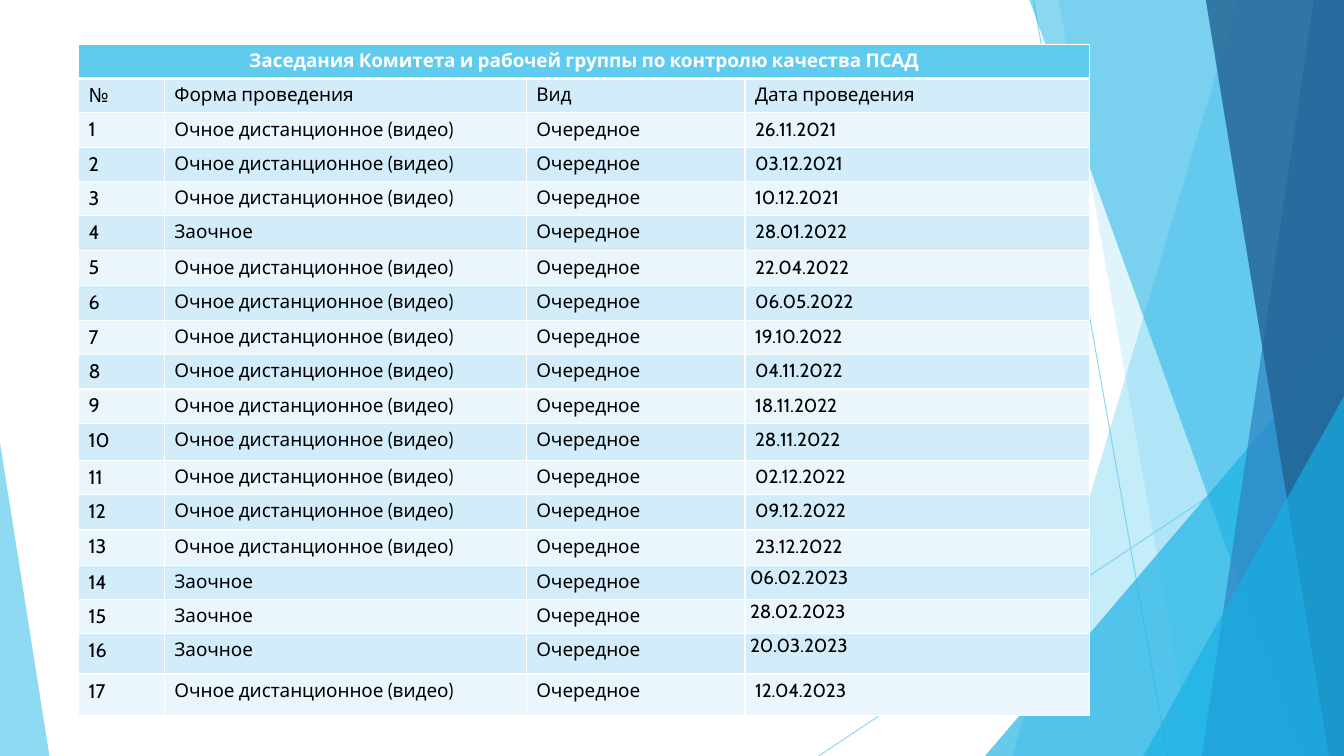
from lxml import etree
from pptx import Presentation
from pptx.dml.color import RGBColor
from pptx.enum.shapes import MSO_CONNECTOR, MSO_SHAPE
from pptx.enum.text import PP_ALIGN
from pptx.oxml.ns import qn
from pptx.util import Inches, Pt

TRIANGLE = MSO_SHAPE.ISOSCELES_TRIANGLE
STRAIGHT = MSO_CONNECTOR.STRAIGHT
CENTER = PP_ALIGN.CENTER
LEFT = PP_ALIGN.LEFT

SKY = RGBColor(0x5F, 0xCB, 0xEF)
AZURE = RGBColor(0x17, 0xB0, 0xE4)
BLUE = RGBColor(0x2E, 0x83, 0xC3)
NAVY = RGBColor(0x22, 0x62, 0x92)
DARK_BAND = RGBColor(0xD2, 0xEC, 0xF9)
LIGHT_BAND = RGBColor(0xEA, 0xF6, 0xFC)
WHITE = RGBColor(0xFF, 0xFF, 0xFF)
BLACK = RGBColor(0, 0, 0)

# The grid has square cells, a hundred to the inch.
GRID_COLUMNS, GRID_ROWS = 1333, 750
CELL = Inches(0.01)

TITLE = "Заседания Комитета и рабочей группы по контролю качества ПСАД"
HEADINGS = ["№", "Форма проведения", "Вид", "Дата проведения"]
DATES = [
    "26.11.2021", "03.12.2021", "10.12.2021", "28.01.2022", "22.04.2022", "06.05.2022",
    "19.10.2022", "04.11.2022", "18.11.2022", "28.11.2022", "02.12.2022", "09.12.2022",
    "23.12.2022", "06.02.2023", "28.02.2023", "20.03.2023", "12.04.2023",
]
ABSENTEE_MEETINGS = {4, 14, 15, 16}
TIGHT_DATES = {14, 15, 16}
COLUMN_WIDTHS = [85, 359, 217, 342]
ROW_HEIGHTS = [34, 34, 34, 34, 34, 35, 34, 35, 34, 34,
               34, 37, 34, 35, 35, 34, 34, 40, 41]


class SlideBuilder:
    font_name = "Cabin"
    text_size = Pt(13.5)
    number_size = Pt(14)

    def __init__(self, presentation):
        self.slide = presentation.slides.add_slide(presentation.slide_layouts[6])
        self.shapes = self.slide.shapes

    def set_opacity(self, color_format, percent):
        color = color_format._xFill.find(qn("a:srgbClr"))
        etree.SubElement(color, qn("a:alpha"), val=str(percent * 1000))

    def paint(self, shape, color, opacity):
        shape.shadow.inherit = False
        shape.line.fill.background()
        shape.fill.solid()
        shape.fill.fore_color.rgb = color
        self.set_opacity(shape.fill.fore_color, opacity)

    def thin_line(self, start, end):
        points = [value * CELL for value in (*start, *end)]
        connector = self.shapes.add_connector(STRAIGHT, *points)
        connector.line.width = Pt(0.75)
        connector.line.color.rgb = SKY
        self.set_opacity(connector.line.fill.fore_color, 70)
        etree.SubElement(connector._element.spPr, qn("a:effectLst"))

    def panel(self, top_left, bottom_left, color, opacity):
        """Fill from a slanted left edge to the right edge of the slide."""
        builder = self.shapes.build_freeform(top_left, 0, scale=CELL)
        builder.add_line_segments([(GRID_COLUMNS, 0), (GRID_COLUMNS, GRID_ROWS),
                                   (bottom_left, GRID_ROWS)])
        self.paint(builder.convert_to_shape(), color, opacity)

    def corner(self, left, top, width, apex, color, opacity):
        """Stand a right triangle on the bottom edge of the slide."""
        box = [value * CELL for value in (left, top, width, GRID_ROWS - top)]
        shape = self.shapes.add_shape(TRIANGLE, *box)
        shape.adjustments[0] = apex
        self.paint(shape, color, opacity)

    def border(self, cell, is_title):
        properties = cell._tc.get_or_add_tcPr()
        for side in ("lnL", "lnR", "lnT", "lnB"):
            width = Pt(3) if is_title and side == "lnB" else Pt(1)
            line = etree.SubElement(properties, qn(f"a:{side}"), w=str(width))
            fill = etree.SubElement(line, qn("a:solidFill"))
            etree.SubElement(fill, qn("a:srgbClr"), val=str(WHITE))

    def fill_cell(self, cell, text, fill, size, is_title=False):
        self.border(cell, is_title)
        cell.fill.solid()
        cell.fill.fore_color.rgb = fill
        paragraph = cell.text_frame.paragraphs[0]
        paragraph.text = text
        paragraph.alignment = CENTER if is_title else LEFT
        paragraph.font.name = self.font_name
        paragraph.font.size = size
        paragraph.font.bold = is_title
        paragraph.font.color.rgb = WHITE if is_title else BLACK

    def table(self, left, top, title, rows):
        box = (left, top, sum(COLUMN_WIDTHS), sum(ROW_HEIGHTS))
        frame = self.shapes.add_table(len(ROW_HEIGHTS), len(COLUMN_WIDTHS),
                                      *[value * CELL for value in box])
        table = frame.table
        for column, width in zip(table.columns, COLUMN_WIDTHS):
            column.width = width * CELL
        for row, height in zip(table.rows, ROW_HEIGHTS):
            row.height = height * CELL
        table.cell(0, 0).merge(table.cell(0, len(COLUMN_WIDTHS) - 1))
        for index in range(len(COLUMN_WIDTHS)):
            self.fill_cell(table.cell(0, index), "" if index else title,
                           SKY, self.text_size, is_title=True)
        for row_index, texts in enumerate(rows, start=1):
            band = DARK_BAND if row_index % 2 else LIGHT_BAND
            for index, text in enumerate(texts):
                size = self.text_size if index else self.number_size
                self.fill_cell(table.cell(row_index, index), text, band, size)
        return table


def meeting_rows():
    rows = [HEADINGS]
    for number, date in enumerate(DATES, start=1):
        form = "Заочное" if number in ABSENTEE_MEETINGS else "Очное дистанционное (видео)"
        rows.append([str(number), form, "Очередное", date])
    return rows


def main():
    presentation = Presentation()
    presentation.slide_width = GRID_COLUMNS * CELL
    presentation.slide_height = GRID_ROWS * CELL
    builder = SlideBuilder(presentation)
    background = builder.slide.background.fill
    background.solid()
    background.fore_color.rgb = WHITE

    builder.thin_line((1025, 0), (1158, GRID_ROWS))
    builder.thin_line((GRID_COLUMNS, 403), (812, GRID_ROWS))
    builder.panel(1228, 1004, SKY, 36)
    builder.panel(1050, 1183, SKY, 20)
    builder.corner(977, 333, 356, 1, AZURE, 66)
    builder.panel(1021, 1291, AZURE, 50)
    builder.panel(1303, 1192, BLUE, 70)
    builder.panel(1196, 1318, NAVY, 80)
    builder.corner(1134, 393, 199, 1, AZURE, 66)
    builder.corner(0, 439, 49, 0, SKY, 70)

    table = builder.table(78, 44, TITLE, meeting_rows())
    for number in TIGHT_DATES:
        cell = table.cell(number + 1, len(COLUMN_WIDTHS) - 1)
        cell.margin_left = 5 * CELL
        cell.margin_right = cell.margin_top = CELL
        cell.margin_bottom = 0

    presentation.save("out.pptx")


if __name__ == "__main__":
    main()
